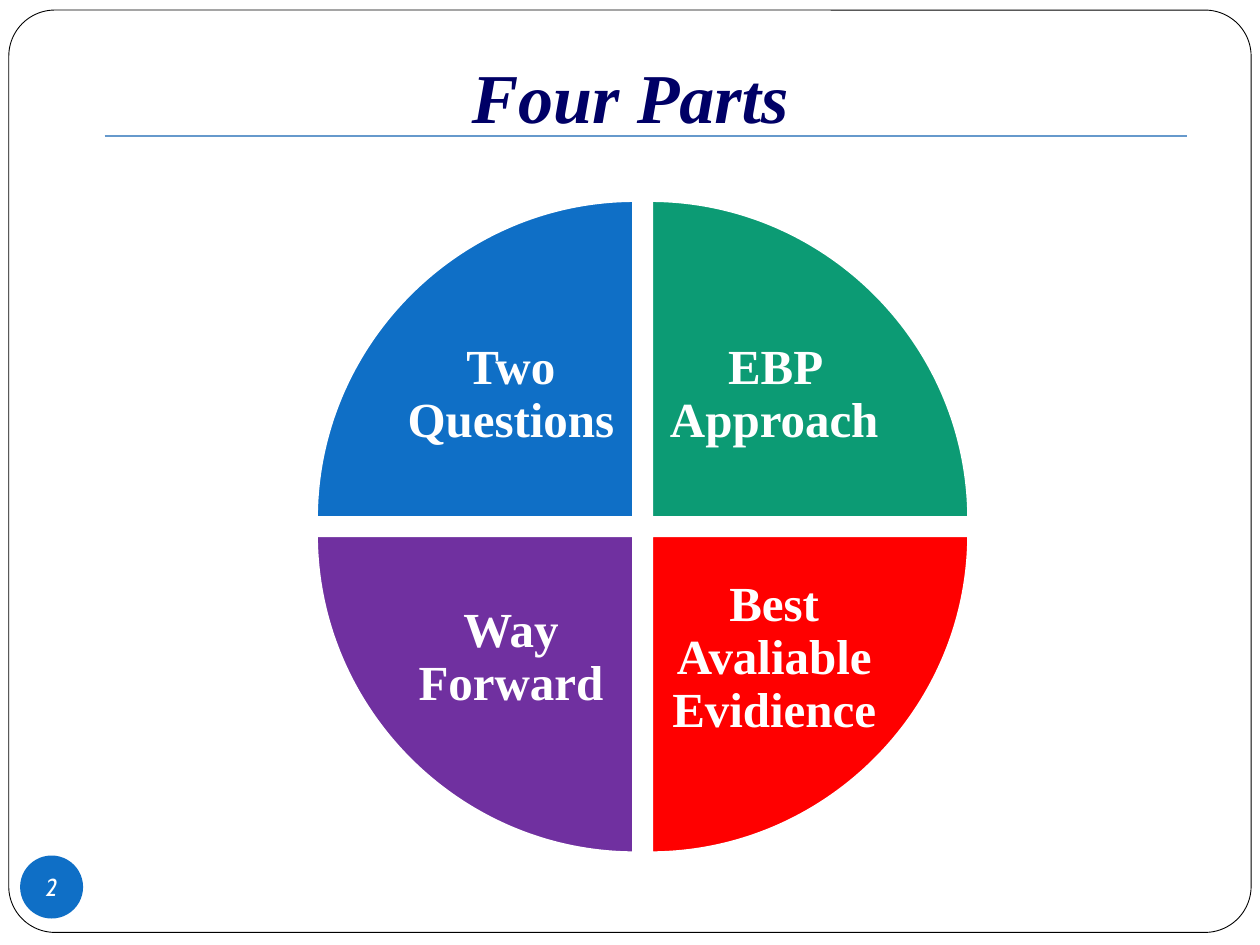
from lxml.etree import SubElement
from pptx import Presentation
from pptx.dml.color import RGBColor
from pptx.enum.shapes import MSO_CONNECTOR, MSO_SHAPE
from pptx.enum.text import MSO_ANCHOR as ANCHOR, PP_ALIGN as ALIGN
from pptx.oxml.ns import qn
from pptx.util import Inches, Pt

COLS, ROWS = 100, 75
SERIF, SANS = "Times New Roman", "Cabin"
WHITE, BLACK, NAVY, RULE = "FFFFFF", "000000", "000066", "6699CC"
BLUE, GREEN, RED, PURPLE = "0F6FC6", "0C9B74", "FF0000", "7030A0"
ARC_PULL = 0.55


def rgb(value):
    return RGBColor.from_string(value)


class Deck:
    def __init__(self):
        self.prs = Presentation()
        self.prs.slide_width, self.prs.slide_height = Inches(10), Inches(7.5)
        self.s = self.prs.slides.add_slide(self.prs.slide_layouts[5])

    def x(self, cols):
        return round(self.prs.slide_width * cols / COLS)

    def y(self, rows):
        return round(self.prs.slide_height * rows / ROWS)

    def box(self, left, top, width, height):
        return self.x(left), self.y(top), self.x(width), self.y(height)

    def paint(self, sp, fill, line=None, width=0):
        sp.shadow.inherit = False
        sp.fill.solid()
        sp.fill.fore_color.rgb = rgb(fill)
        if line:
            sp.line.color.rgb = rgb(line)
            sp.line.width = Pt(width)
        else:
            sp.line.fill.background()

    def text(self, sp, text, font, size, color, bold=False, italic=False,
             anchor=ANCHOR.MIDDLE, insets=(0, 0, 0, 0), spacing=1, wrap=True):
        tf = sp.text_frame
        tf.text = text
        tf.word_wrap = wrap
        tf.vertical_anchor = anchor
        left, top, right, bottom = insets
        tf.margin_left, tf.margin_right = self.x(left), self.x(right)
        tf.margin_top, tf.margin_bottom = self.y(top), self.y(bottom)
        p = tf.paragraphs[0]
        p.alignment = ALIGN.CENTER
        p.line_spacing = spacing
        r = p.runs[0]
        r.font.name, r.font.size = font, Pt(size)
        r.font.bold, r.font.italic = bold, italic
        r.font.color.rgb = rgb(color)

    def frame(self, box):
        sp = self.s.shapes.add_shape(MSO_SHAPE.ROUNDED_RECTANGLE, *self.box(*box))
        sp.adjustments[0] = 0.05
        self.paint(sp, WHITE, BLACK, 0.5)
        tree = self.s.shapes.element
        tree.remove(sp.element)
        tree.insert(2, sp.element)

    def title(self, text, box):
        sp = self.s.shapes.title
        sp.left, sp.top, sp.width, sp.height = self.box(*box)
        self.text(sp, text, SERIF, 40, NAVY, True, True, ANCHOR.BOTTOM, (1, 0.5, 1, 0.5))

    def rule(self, left, right, row):
        c = self.s.shapes.add_connector(
            MSO_CONNECTOR.STRAIGHT, self.x(left), self.y(row), self.x(right), self.y(row))
        c.line.color.rgb = rgb(RULE)
        c.line.width = Pt(0.75)
        SubElement(c.element.spPr, qn("a:effectLst"))

    def badge(self, text, box):
        sp = self.s.shapes.add_shape(MSO_SHAPE.OVAL, *self.box(*box))
        self.paint(sp, BLUE)
        self.text(sp, text, SANS, 14, WHITE, italic=True, wrap=False)

    def round_first_side(self, sp):
        start = next(sp.element.iter(qn("a:moveTo")))[0]
        side = next(sp.element.iter(qn("a:lnTo")))
        x1, y1 = int(start.get("x")), int(start.get("y"))
        x2, y2 = int(side[0].get("x")), int(side[0].get("y"))
        curve = SubElement(side.getparent(), qn("a:cubicBezTo"))
        for x, y in ((x1, y1 + ARC_PULL * (y2 - y1)),
                     (x2 + ARC_PULL * (x1 - x2), y2),
                     (x2, y2)):
            SubElement(curve, qn("a:pt"), x=str(round(x)), y=str(round(y)))
        side.getparent().replace(side, curve)

    def quadrant(self, text, fill, side, level, center=(51, 41.8), gap=1.2, radius=25.4):
        cx = center[0] + side * gap / 2
        cy = center[1] + level * gap / 2
        fb = self.s.shapes.build_freeform(self.x(cx + side * radius), self.y(cy))
        fb.add_line_segments([(self.x(cx), self.y(cy + level * radius)),
                              (self.x(cx), self.y(cy))], close=True)
        sp = fb.convert_to_shape()
        self.round_first_side(sp)
        self.paint(sp, fill, WHITE, 3.35)
        outer, inner = 7.2, 1.5
        left, right = (outer, inner) if side < 0 else (inner, outer)
        top, bottom = (outer, inner) if level < 0 else (inner, outer)
        self.text(sp, text, SERIF, 28, WHITE, True,
                  insets=(left, top, right, bottom), spacing=0.9)


def main():
    deck = Deck()
    deck.frame((0.7, 0.8, 98.6, 73.2))
    deck.badge("2", (1.6, 67.9, 5, 5))
    deck.title("Four Parts", (0, 3.75, 100, 7.7))
    deck.rule(8.3, 94.2, 10.8)
    for text, fill, side, level in (
        ("Two Questions", BLUE, -1, -1),
        ("EBP Approach", GREEN, 1, -1),
        ("Best Avaliable Evidience", RED, 1, 1),
        ("Way Forward", PURPLE, -1, 1),
    ):
        deck.quadrant(text, fill, side, level)
    deck.prs.save("out.pptx")


if __name__ == "__main__":
    main()
